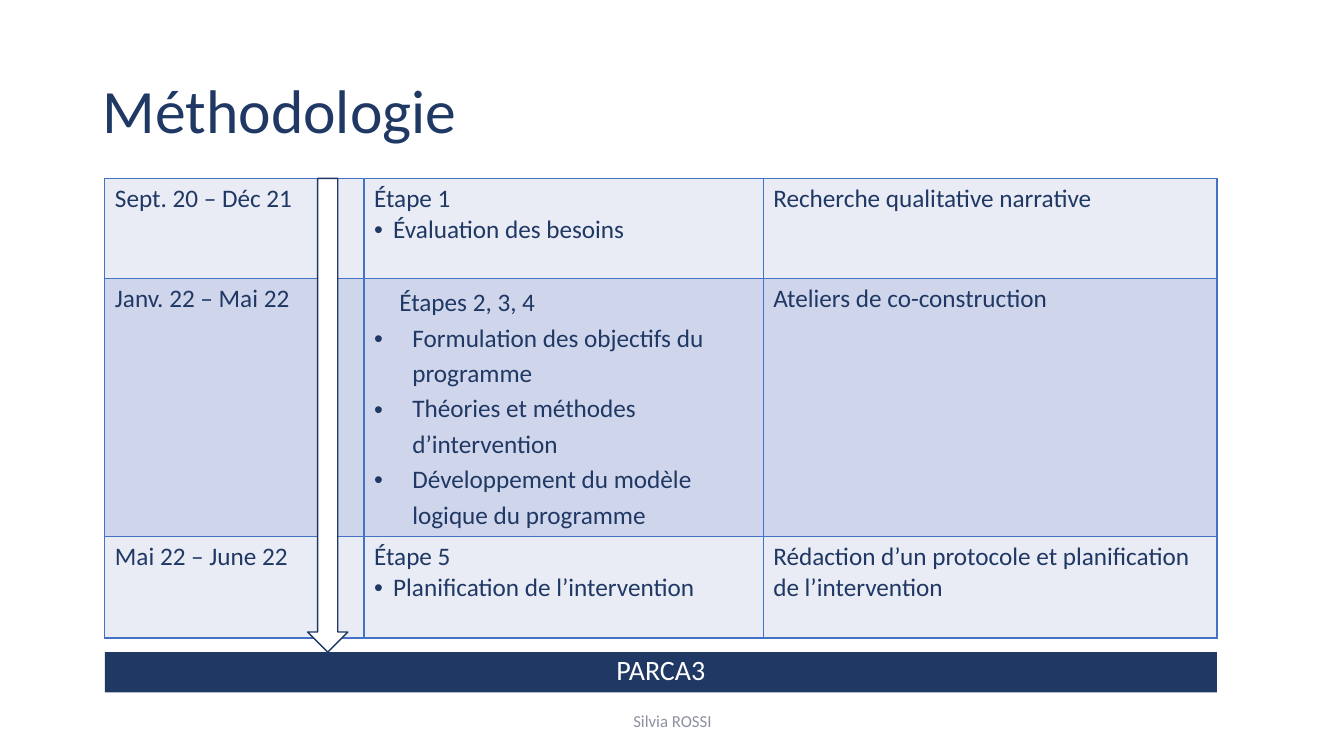
from pptx import Presentation
from pptx.dml.color import RGBColor
from pptx.enum.shapes import MSO_SHAPE
from pptx.enum.text import MSO_ANCHOR, PP_ALIGN
from pptx.oxml.ns import qn
from pptx.util import Inches, Pt
from lxml.etree import SubElement

NAVY = RGBColor(0x1F, 0x38, 0x64)
WHITE = RGBColor(0xFF, 0xFF, 0xFF)
GREY = RGBColor(0x8D, 0x91, 0x9F)
BORDER = RGBColor(0x44, 0x72, 0xC4)
BANDS = [RGBColor(0xE9, 0xEB, 0xF5), RGBColor(0xCF, 0xD5, 0xEA)]

TITLE = "Méthodologie"
AUTHOR = "Silvia ROSSI"
PROGRAMME = "PARCA3"
PHASES = [
    ("Sept. 20 – Déc 21", "Étape 1", ["Évaluation des besoins"],
     "Recherche qualitative\u00a0narrative"),
    ("Janv. 22 – Mai 22", "Étapes 2, 3, 4",
     ["Formulation des objectifs du programme",
      "Théories et méthodes d’intervention",
      "Développement du modèle logique du programme"],
     "Ateliers de co-construction"),
    ("Mai 22 – June 22", "Étape 5", ["Planification de l’intervention"],
     "Rédaction d’un protocole et planification de l’intervention"),
]
COMPACT = {"step_indent": 0, "bullet_indent": 0.19, "spacing": 1.0}
AIRY = {"step_indent": 0.25, "bullet_indent": 0.38, "spacing": 1.15}
LAYOUTS = [COMPACT, AIRY, COMPACT]

SLIDE_W, SLIDE_H = 13.33, 7.5
COLUMNS = [2.57, 3.96, 4.5]
ROWS = [0.99, 2.56, 1.01]
GRID_LEFT, GRID_TOP = 1.04, 1.77
GRID_W, GRID_H = sum(COLUMNS), sum(ROWS)
BAR_TOP, BAR_H = 6.47, 0.4
ARROW_W = 0.4
ARROW_LEFT = GRID_LEFT + COLUMNS[0] * 0.86 - ARROW_W / 2


def apply(target, formats):
    for name, value in formats.items():
        setattr(target, name, value)


def write(paragraph, text, size, color, indent=0, bullet=False, **formats):
    apply(paragraph, formats)
    if indent:
        properties = paragraph._p.get_or_add_pPr()
        properties.set("marL", str(Inches(indent)))
        properties.set("indent", str(-Inches(indent) if bullet else 0))
        if bullet:
            SubElement(properties, qn("a:buFont"), typeface="Arial")
            SubElement(properties, qn("a:buChar"), char="•")
    run = paragraph.add_run()
    run.text = text
    apply(run.font, {"name": "Calibri", "size": Pt(size), "bold": False})
    run.font.color.rgb = color


def add_label(box, text, size, color, **formats):
    label = slide.shapes.add_textbox(*map(Inches, box)).text_frame
    apply(label, {"word_wrap": True, "vertical_anchor": MSO_ANCHOR.MIDDLE})
    write(label.paragraphs[0], text, size, color, **formats)


def add_solid(preset, box, fill, line=None):
    solid = slide.shapes.add_shape(preset, *map(Inches, box))
    solid.shadow.inherit = False
    solid.fill.solid()
    solid.fill.fore_color.rgb = fill
    if line is None:
        solid.line.fill.background()
    else:
        solid.line.color.rgb = line
        solid.line.width = Pt(1)
    return solid


def frame_cell(cell, fill):
    properties = cell._tc.get_or_add_tcPr()
    for side in ("lnL", "lnR", "lnT", "lnB"):
        edge = SubElement(properties, qn(f"a:{side}"), w=str(Pt(1)))
        paint = SubElement(edge, qn("a:solidFill"))
        SubElement(paint, qn("a:srgbClr"), val=str(BORDER))
    cell.fill.solid()
    cell.fill.fore_color.rgb = fill


deck = Presentation()
apply(deck, {"slide_width": Inches(SLIDE_W), "slide_height": Inches(SLIDE_H)})
slide = deck.slides.add_slide(deck.slide_layouts[6])

add_label((0.92, 0.4, 11.5, 1.45), TITLE, 44, NAVY, line_spacing=0.9)
add_label((4.42, 6.95, 4.5, 0.4), AUTHOR, 12, GREY, alignment=PP_ALIGN.CENTER)

schedule = slide.shapes.add_table(
    len(ROWS), len(COLUMNS),
    *map(Inches, (GRID_LEFT, GRID_TOP, GRID_W, GRID_H))).table
apply(schedule, {"first_row": False, "horz_banding": False})
for column, width in zip(schedule.columns, COLUMNS):
    column.width = Inches(width)

for index, (period, step, tasks, method) in enumerate(PHASES):
    row, layout = schedule.rows[index], LAYOUTS[index]
    row.height = Inches(ROWS[index])
    for cell in row.cells:
        frame_cell(cell, BANDS[index % 2])
    period_cell, step_cell, method_cell = (cell.text_frame for cell in row.cells)
    write(period_cell.paragraphs[0], period, 18, NAVY)
    write(method_cell.paragraphs[0], method, 18, NAVY)
    write(step_cell.paragraphs[0], step, 18, NAVY, layout["step_indent"],
          line_spacing=layout["spacing"])
    for task in tasks:
        write(step_cell.add_paragraph(), task, 18, NAVY, layout["bullet_indent"],
              True, line_spacing=layout["spacing"])

programme_bar = add_solid(MSO_SHAPE.RECTANGLE,
                          (GRID_LEFT, BAR_TOP, GRID_W, BAR_H), NAVY)
programme_bar.text_frame.vertical_anchor = MSO_ANCHOR.MIDDLE
write(programme_bar.text_frame.paragraphs[0], PROGRAMME, 20, WHITE,
      alignment=PP_ALIGN.CENTER, line_spacing=0.8)
add_solid(MSO_SHAPE.DOWN_ARROW,
          (ARROW_LEFT, GRID_TOP, ARROW_W, BAR_TOP - GRID_TOP), WHITE, NAVY)

deck.save("out.pptx")
